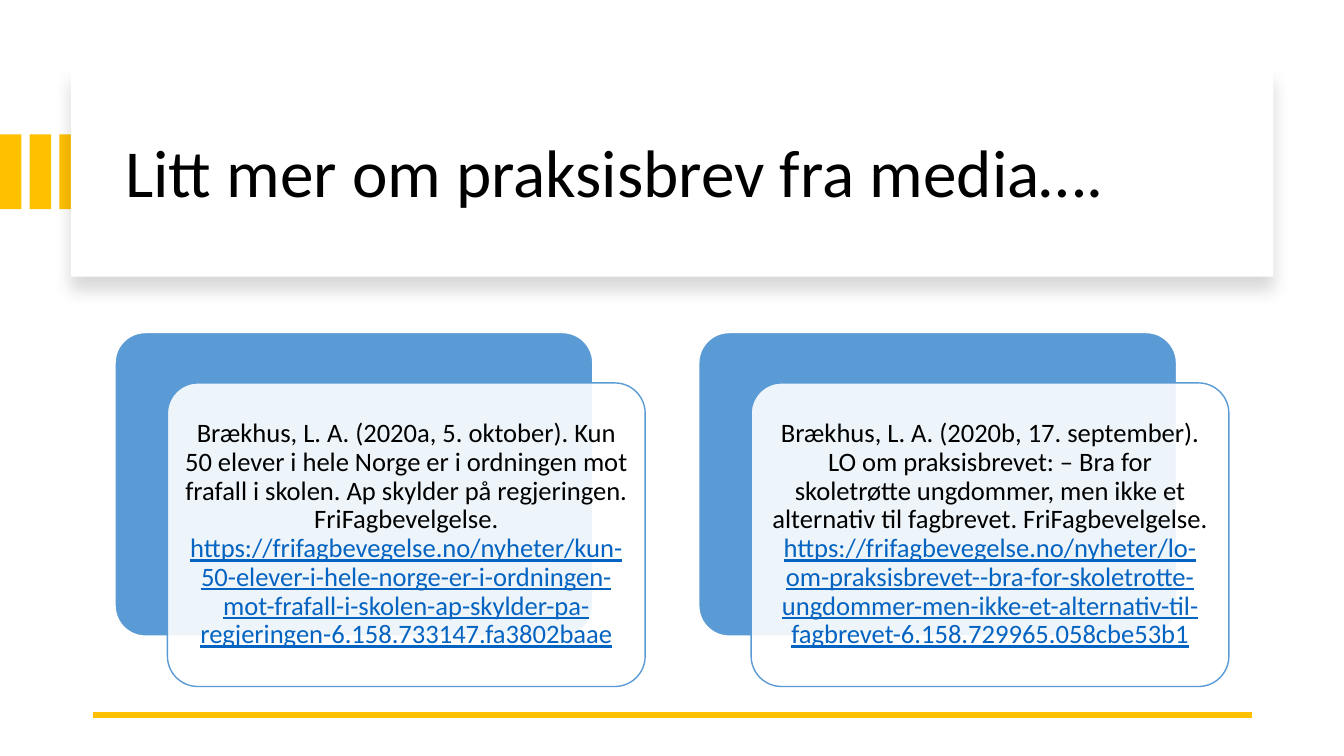
from lxml.etree import SubElement
from pptx import Presentation
from pptx.dml.color import RGBColor
from pptx.enum.shapes import MSO_CONNECTOR, MSO_SHAPE
from pptx.enum.text import MSO_ANCHOR, MSO_AUTO_SIZE, PP_ALIGN
from pptx.oxml.ns import qn
from pptx.util import Cm, Pt

BLACK = RGBColor(0x00, 0x00, 0x00)
WHITE = RGBColor(0xFF, 0xFF, 0xFF)
GOLD = RGBColor(0xFF, 0xC0, 0x00)
BLUE = RGBColor(0x5B, 0x9B, 0xD5)
LINK_BLUE = RGBColor(0x05, 0x63, 0xC1)

ARTICLES = [
    (
        "Brækhus, L. A. (2020a, 5. oktober). Kun 50 elever i hele Norge er i ordningen "
        "mot frafall i skolen. Ap skylder på regjeringen. FriFagbevelgelse. ",
        "https://frifagbevegelse.no/nyheter/kun-50-elever-i-hele-norge-er-i-ordningen-"
        "mot-frafall-i-skolen-ap-skylder-pa-regjeringen-6.158.733147.fa3802baae",
    ),
    (
        "Brækhus, L. A. (2020b, 17. september). LO om praksisbrevet: – Bra for "
        "skoletrøtte ungdommer, men ikke et alternativ til fagbrevet. FriFagbevelgelse. ",
        "https://frifagbevegelse.no/nyheter/lo-om-praksisbrevet--bra-for-skoletrotte-"
        "ungdommer-men-ikke-et-alternativ-til-fagbrevet-6.158.729965.058cbe53b1",
    ),
]


class SlideBuilder:
    font_name = "Calibri"
    title_size = Pt(48)
    body_size = Pt(19)
    line_spacing = 0.9

    def __init__(self, slide):
        self.slide = slide

    def box(self, left, top, width, height, fill, line=None, rounded=False):
        kind = MSO_SHAPE.ROUNDED_RECTANGLE if rounded else MSO_SHAPE.RECTANGLE
        shape = self.slide.shapes.add_shape(kind, Cm(left), Cm(top), Cm(width), Cm(height))
        shape.shadow.inherit = False
        shape.fill.solid()
        shape.fill.fore_color.rgb = fill
        if rounded:
            shape.adjustments[0] = 0.1
        if line is None:
            shape.line.fill.background()
        else:
            shape.line.color.rgb = line
            shape.line.width = Pt(1)
        return shape

    def drop_shadow(self, shape):
        effects = shape.element.spPr.find(qn("a:effectLst"))
        shadow = SubElement(
            effects, qn("a:outerShdw"), blurRad=str(Pt(11)), dist=str(Pt(10)),
            dir="5400000", algn="t", rotWithShape="0",
        )
        color = SubElement(shadow, qn("a:srgbClr"), val=str(BLACK))
        SubElement(color, qn("a:alpha"), val="15000")

    def style_run(self, run, size, color):
        run.font.name = self.font_name
        run.font.size = size
        run.font.color.rgb = color

    def title(self, text, left, top, width, height):
        title = self.slide.shapes.title
        title.left, title.top = Cm(left), Cm(top)
        title.width, title.height = Cm(width), Cm(height)
        text_frame = title.text_frame
        text_frame.text = text
        text_frame.auto_size = MSO_AUTO_SIZE.NONE
        text_frame.vertical_anchor = MSO_ANCHOR.MIDDLE
        paragraph = text_frame.paragraphs[0]
        paragraph.alignment = PP_ALIGN.LEFT
        paragraph.line_spacing = self.line_spacing
        self.style_run(paragraph.runs[0], self.title_size, BLACK)
        return title

    def rule(self, left, right, top):
        line = self.slide.shapes.add_connector(
            MSO_CONNECTOR.STRAIGHT, Cm(right), Cm(top), Cm(left), Cm(top)
        )
        line.line.color.rgb = GOLD
        line.line.width = Pt(4.5)
        SubElement(line.element.spPr, qn("a:effectLst"))

    def article_card(self, left, top, citation, address):
        width, height = 12.04, 7.65
        self.box(left, top, width, height, BLUE, WHITE, rounded=True)
        card = self.box(left + 1.32, top + 1.27, width, height, WHITE, BLUE, rounded=True)
        color = card.element.spPr.find(qn("a:solidFill"))[0]
        SubElement(color, qn("a:alpha"), val="90000")
        text_frame = card.text_frame
        text_frame.word_wrap = True
        text_frame.vertical_anchor = MSO_ANCHOR.MIDDLE
        text_frame.margin_left = text_frame.margin_right = Cm(0.2)
        text_frame.margin_top = text_frame.margin_bottom = Cm(0.43)
        text_frame.text = citation
        paragraph = text_frame.paragraphs[0]
        paragraph.alignment = PP_ALIGN.CENTER
        paragraph.line_spacing = self.line_spacing
        self.style_run(paragraph.runs[0], self.body_size, BLACK)
        link = paragraph.add_run()
        link.text = address
        self.style_run(link, self.body_size, LINK_BLUE)
        link.font.underline = True


def main():
    presentation = Presentation()
    presentation.slide_width = Cm(33.87)
    presentation.slide_height = Cm(19.05)
    builder = SlideBuilder(presentation.slides.add_slide(presentation.slide_layouts[5]))

    for index in range(3):
        builder.box(index * 0.75, 3.39, 0.54, 1.88, GOLD)
    title_card = builder.box(1.79, 1.7, 30.3, 5.27, WHITE)
    builder.drop_shadow(title_card)
    title = builder.title("Litt mer om praksisbrev fra media….", 2.9, 2.26, 28.27, 4.32)
    title_card.element.addnext(title.element)
    builder.rule(2.34, 31.55, 18.01)

    for index, (citation, address) in enumerate(ARTICLES):
        builder.article_card(2.9 + index * 14.71, 8.38, citation, address)

    presentation.save("out.pptx")


if __name__ == "__main__":
    main()
